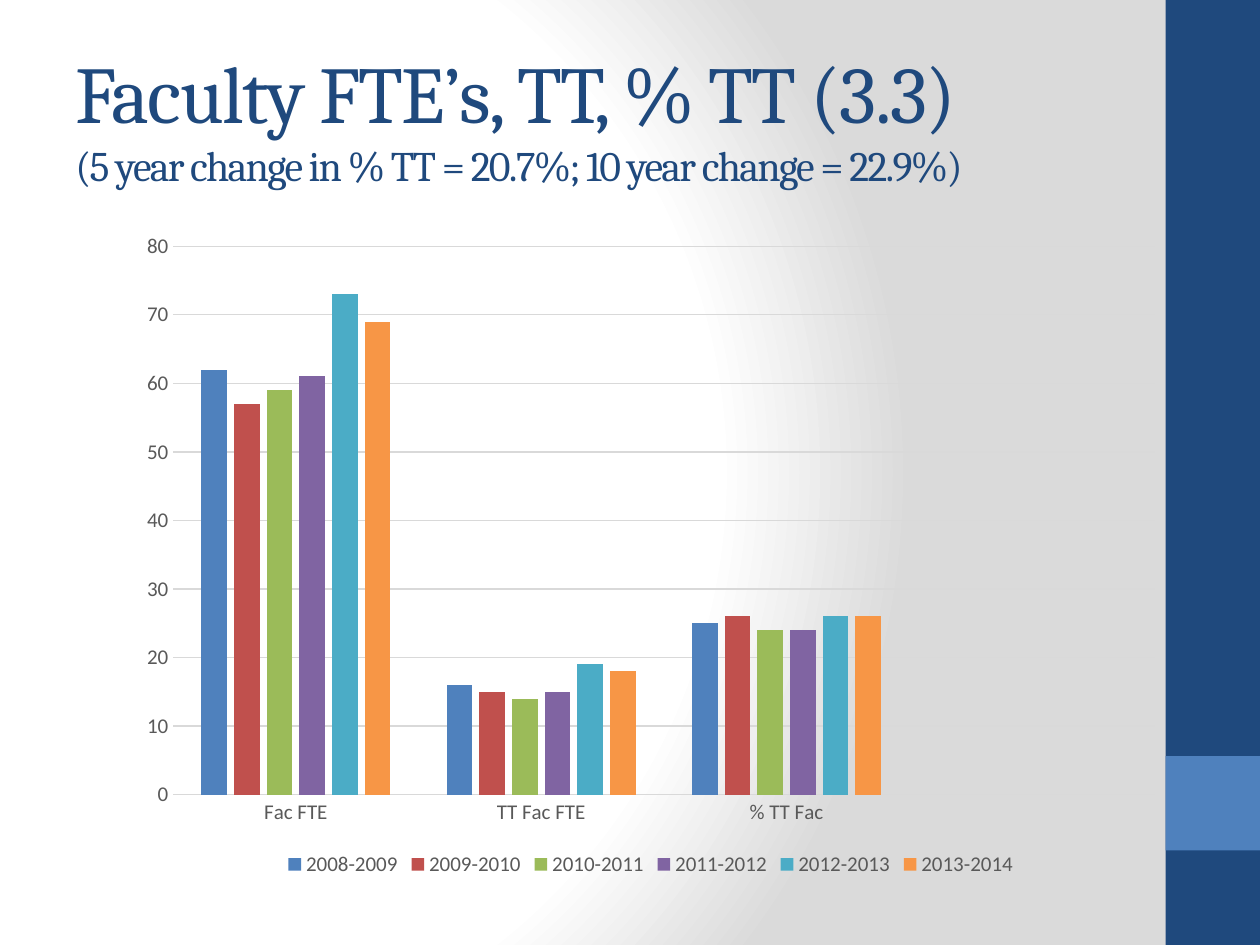
from pptx import Presentation
from pptx.chart.data import CategoryChartData
from pptx.dml.color import RGBColor
from pptx.enum.chart import XL_CHART_TYPE as ChartType
from pptx.enum.chart import XL_LEGEND_POSITION as LegendPosition
from pptx.enum.chart import XL_TICK_MARK as TickMark
from pptx.enum.shapes import MSO_SHAPE as Preset
from pptx.enum.text import MSO_ANCHOR as Anchor
from pptx.oxml import parse_xml
from pptx.oxml.ns import nsdecls
from pptx.util import Inches, Pt

COLORS = {
    "navy": "1F497D", "blue": "4F81BD", "white": "FFFFFF", "shade": "DADADA",
    "grid": "D9D9D9", "label": "595959", "black": "000000",
}
CATEGORIES = ["Fac FTE", "TT Fac FTE", "% TT Fac", ""]
SERIES = [
    ("2008-2009", "4F81BD", [62, 16, 25, None]),
    ("2009-2010", "C0504D", [57, 15, 26, None]),
    ("2010-2011", "9BBB59", [59, 14, 24, None]),
    ("2011-2012", "8064A2", [61, 15, 24, None]),
    ("2012-2013", "4BACC6", [73, 19, 26, None]),
    ("2013-2014", "F79646", [69, 18, 26, None]),
]


def rgb(name):
    """Return the palette colour with the given name."""
    return RGBColor.from_string(COLORS[name])


def style_font(font, size, color, face="Calibri"):
    """Set the face, size and colour of a font."""
    font.name, font.size = face, Pt(size)
    font.color.rgb = rgb(color)


def add_background(page):
    """Fill the page with a radial gradient centred towards the left."""
    stops = "".join(
        f'<a:gs pos="{place * 1000}"><a:srgbClr val="{COLORS[name]}"/></a:gs>'
        for place, name in [(0, "white"), (75, "white"), (100, "shade")]
    )
    page.element.cSld.insert(0, parse_xml(
        f'<p:bg {nsdecls("p", "a")}><p:bgPr><a:gradFill rotWithShape="1">'
        f'<a:gsLst>{stops}</a:gsLst><a:path path="circle">'
        '<a:fillToRect l="20000" t="50000" r="100000" b="50000"/></a:path>'
        '</a:gradFill><a:effectLst/></p:bgPr></p:bg>'
    ))


def add_block(page, left, top, width, height, color):
    """Add a plain rectangle without a line."""
    block = page.shapes.add_shape(
        Preset.RECTANGLE, Inches(left), Inches(top), Inches(width), Inches(height))
    block.shadow.inherit = False
    block.fill.solid()
    block.fill.fore_color.rgb = rgb(color)
    block.line.fill.background()


def add_side_band(page, left, top, width, height):
    """Add the side band with a square accent two widths above its foot."""
    add_block(page, left, top, width, height, "navy")
    add_block(page, left, top + height - 2 * width, width, width, "blue")


def add_span(para, text, size, color="navy", face="Cambria", spacing=-1):
    """Add a formatted run with letter spacing in points."""
    span = para.add_run()
    span.text = text
    style_font(span.font, size, color, face)
    span.font._element.set("spc", str(spacing * 100))


def add_title(page, left, top, width, height):
    """Add the heading and its smaller second line."""
    box = page.shapes.add_textbox(
        Inches(left), Inches(top), Inches(width), Inches(height))
    frame = box.text_frame
    frame.word_wrap = True
    frame.vertical_anchor = Anchor.MIDDLE
    para = frame.paragraphs[0]
    add_span(para, "Faculty FTE’s, TT, % TT (3.3)", size=46)
    para.add_line_break()
    add_span(para, "(5 year change in % TT = 20.7%; 10 year change = 22.9%)", size=24)


def style_line(line):
    """Give a chart line the thin grid style."""
    line.color.rgb = rgb("grid")
    line.width = Pt(0.75)


def add_faculty_chart(page, left, top, width, height):
    """Add the clustered columns of faculty figures by year."""
    data = CategoryChartData()
    data.categories = CATEGORIES
    for name, _, values in SERIES:
        data.add_series(name, values)
    chart = page.shapes.add_chart(
        ChartType.COLUMN_CLUSTERED, Inches(left), Inches(top),
        Inches(width), Inches(height), data).chart
    style_font(chart.font, 10, "black")
    chart.has_title = False
    chart.has_legend = True
    chart.legend.position = LegendPosition.BOTTOM
    chart.legend.include_in_layout = False
    style_font(chart.legend.font, 12, "label")

    plot = chart.plots[0]
    plot.gap_width, plot.overlap = 219, -27
    plot.vary_by_categories = False
    for series, (_, color, _) in zip(plot.series, SERIES):
        series.format.fill.solid()
        series.format.fill.fore_color.rgb = RGBColor.from_string(color)

    for axis in (chart.category_axis, chart.value_axis):
        axis.major_tick_mark = axis.minor_tick_mark = TickMark.NONE
        style_font(axis.tick_labels.font, 12, "label")
    style_line(chart.category_axis.format.line)
    scale = chart.value_axis
    scale.minimum_scale, scale.maximum_scale, scale.major_unit = 0, 80, 10
    scale.format.line.fill.background()
    scale.has_major_gridlines = True
    style_line(scale.major_gridlines.format.line)


def main():
    """Build the slide and save the deck."""
    deck = Presentation()
    deck.slide_width, deck.slide_height = Inches(10), Inches(7.5)
    page = deck.slides.add_slide(deck.slide_layouts[6])
    add_background(page)
    add_side_band(page, 9.25, 0, 0.75, 7.5)
    add_title(page, 0.5, 0.3, 8.33, 1.25)
    add_faculty_chart(page, 1, 1.75, 8.33, 5.25)
    deck.save("out.pptx")


if __name__ == "__main__":
    main()
